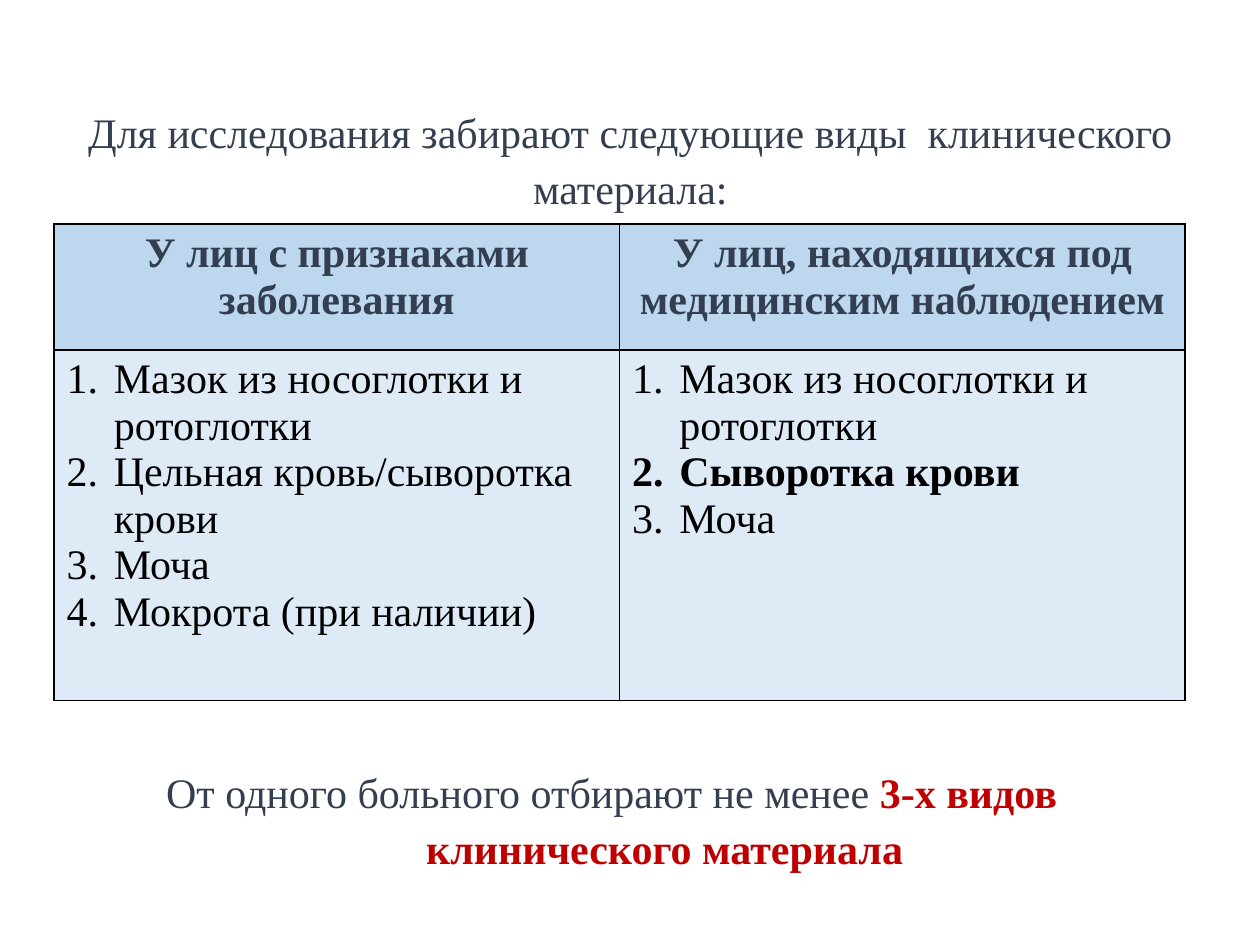
from dataclasses import dataclass

from lxml import etree
from pptx import Presentation
from pptx.dml.color import RGBColor
from pptx.enum.text import MSO_ANCHOR, PP_ALIGN
from pptx.oxml.ns import qn
from pptx.util import Cm, Pt

LEFT, CENTER, JUSTIFY = PP_ALIGN.LEFT, PP_ALIGN.CENTER, PP_ALIGN.JUSTIFY
TOP, MIDDLE = MSO_ANCHOR.TOP, MSO_ANCHOR.MIDDLE
FONT, SIZE = "Times New Roman", Pt(24)
SLATE, RED, BLACK = "333F50", "C00000", "000000"
HEADER_FILL, BODY_FILL = "BDD7EE", "DEEBF7"
INDENT = Cm(0.95)


@dataclass(frozen=True)
class Run:
    """A piece of text with its own colour and weight."""
    text: str
    color: str = SLATE
    bold: bool = False


@dataclass(frozen=True)
class Para:
    """A paragraph made of runs."""
    runs: tuple[Run, ...]
    align: PP_ALIGN = CENTER
    numbered: bool = False
    spacing: float = 1.0


@dataclass(frozen=True)
class Box:
    """A text box placed in centimetres."""
    left: float
    top: float
    width: float
    height: float
    anchor: MSO_ANCHOR
    paras: tuple[Para, ...]


def rgb(value: str) -> RGBColor:
    """Turn a hex string into a colour."""
    return RGBColor.from_string(value)


def heading(text: str) -> tuple[Para, ...]:
    """Describe a bold column heading."""
    return (Para((Run(text, bold=True),)),)


def item(text: str, bold: bool = False) -> Para:
    """Describe one numbered list item."""
    return Para((Run(text, BLACK, bold),), LEFT, numbered=True)


TITLE = Box(0.71, 1.93, 24, 4.37, TOP, (
    Para((Run("Для исследования забирают следующие виды  клинического материала:"),),
         spacing=1.1),
))
CONCLUSION = Box(3.1, 15.32, 20.6, 2.31, MIDDLE, (
    Para((Run("От одного больного отбирают не менее "),
          Run("3-х видов ", RED, True)), JUSTIFY, spacing=1.1),
    Para((Run("клинического материала", RED, True),), spacing=1.1),
))
SWAB = item("Мазок из носоглотки и ротоглотки")
URINE = item("Моча")
ROWS = (
    (2.54, HEADER_FILL, (
        heading("У лиц с признаками заболевания"),
        heading("У лиц, находящихся под медицинским наблюдением"),
    )),
    (7.06, BODY_FILL, (
        (SWAB, item("Цельная кровь/сыворотка крови"), URINE,
         item("Мокрота (при наличии)")),
        (SWAB, item("Сыворотка крови", bold=True), URINE),
    )),
)


def write(tf, paras: tuple[Para, ...]) -> None:
    """Fill a text frame with paragraphs."""
    for i, para in enumerate(paras):
        p = tf.add_paragraph() if i else tf.paragraphs[0]
        p.alignment = para.align
        p.line_spacing = para.spacing
        if para.numbered:
            pPr = p._p.get_or_add_pPr()
            pPr.set("marL", str(INDENT))
            pPr.set("indent", str(-INDENT))
            etree.SubElement(pPr, qn("a:buFont"), typeface="+mj-lt")
            etree.SubElement(pPr, qn("a:buAutoNum"), type="arabicPeriod")
        for run in para.runs:
            r = p.add_run()
            r.text = run.text
            r.font.name, r.font.size, r.font.bold = FONT, SIZE, run.bold
            r.font.color.rgb = rgb(run.color)


def add_box(s, box: Box) -> None:
    """Add a wrapping text box."""
    sp = s.shapes.add_textbox(Cm(box.left), Cm(box.top), Cm(box.width), Cm(box.height))
    tf = sp.text_frame
    tf.word_wrap = True
    tf.vertical_anchor = box.anchor
    write(tf, box.paras)


def set_borders(cell) -> None:
    """Draw a thin black line on every side of a cell."""
    tcPr = cell._tc.get_or_add_tcPr()
    for i, side in enumerate(("lnL", "lnR", "lnT", "lnB")):
        ln = etree.Element(qn(f"a:{side}"), w=str(Pt(1)))
        fill = etree.SubElement(ln, qn("a:solidFill"))
        etree.SubElement(fill, qn("a:srgbClr"), val=BLACK)
        tcPr.insert(i, ln)


def add_material_table(s) -> None:
    """Add the table of clinical materials."""
    height = sum(row[0] for row in ROWS)
    table = s.shapes.add_table(len(ROWS), 2, Cm(1.09), Cm(4.52), Cm(22.8), Cm(height)).table
    for i, (row_height, color, cells) in enumerate(ROWS):
        table.rows[i].height = Cm(row_height)
        for j, paras in enumerate(cells):
            cell = table.cell(i, j)
            cell.fill.solid()
            cell.fill.fore_color.rgb = rgb(color)
            set_borders(cell)
            write(cell.text_frame, paras)


def main() -> None:
    """Build and save the slide."""
    prs = Presentation()
    prs.slide_width, prs.slide_height = Cm(25.4), Cm(19.05)
    s = prs.slides.add_slide(prs.slide_layouts[6])
    add_box(s, TITLE)
    add_material_table(s)
    add_box(s, CONCLUSION)
    prs.save("out.pptx")


if __name__ == "__main__":
    main()
